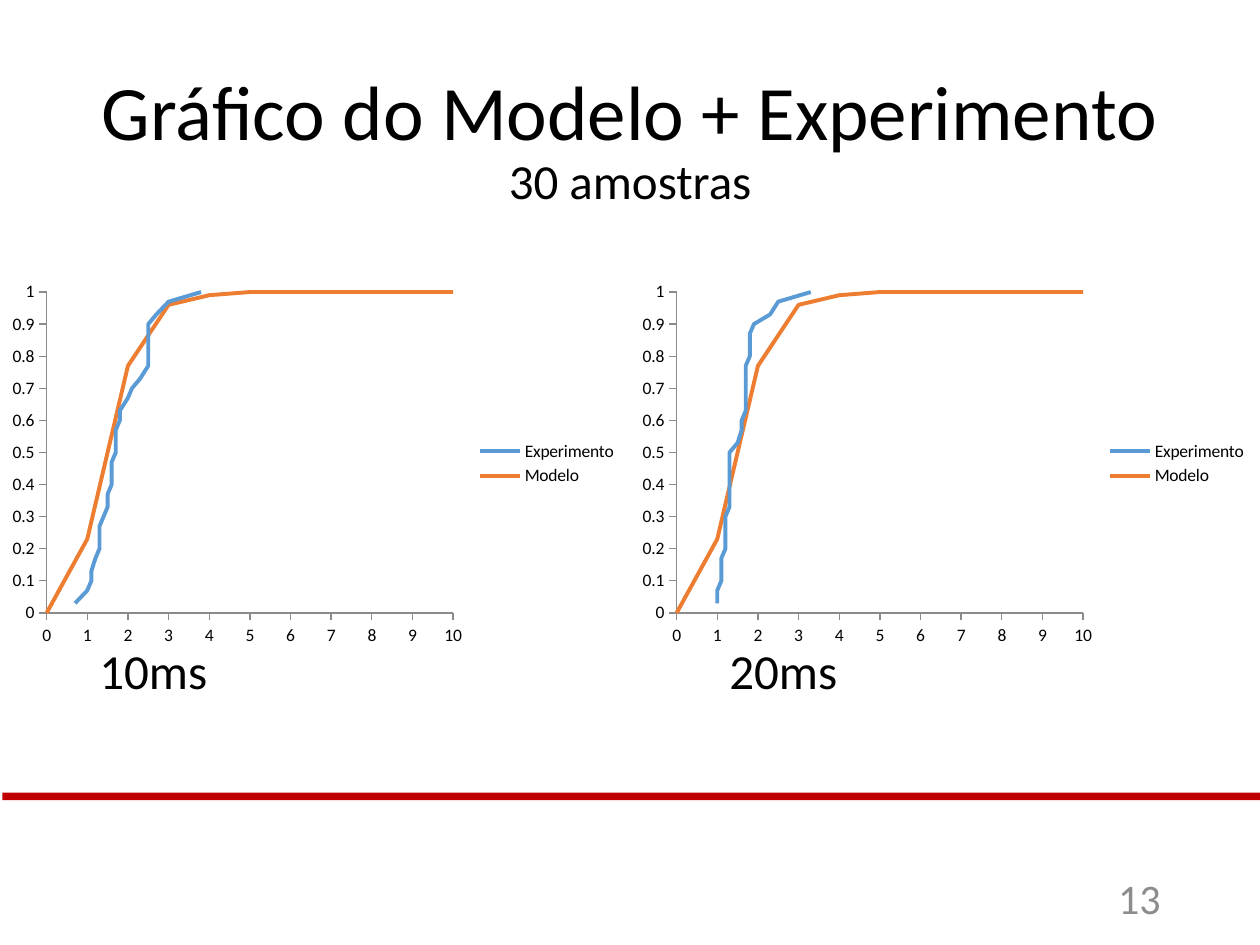
from lxml import etree
from pptx import Presentation, util as u
from pptx.chart.data import XyChartData
from pptx.dml.color import RGBColor
from pptx.enum import chart as charts, shapes, text
from pptx.oxml.ns import qn

FONT = "Calibri"
BLACK, GREY, RED = "000000", "8C8C8C", "C00000"
AXIS_GREY = "8B8B8B"
SERIES_COLORS = {"Experimento": "5B9BD5", "Modelo": "ED7D31"}
SAMPLES = 30
MODEL = [0, 0.23, 0.77, 0.96, 0.99, 1, 1, 1, 1, 1, 1]
EXPERIMENTS = {
    "10ms": [0.7, 1, 1.1, 1.1, 1.2, 1.3, 1.3, 1.3, 1.4, 1.5,
             1.5, 1.6, 1.6, 1.6, 1.7, 1.7, 1.7, 1.8, 1.8, 2,
             2.1, 2.3, 2.5, 2.5, 2.5, 2.5, 2.5, 2.7, 3, 3.8],
    "20ms": [1, 1, 1.1, 1.1, 1.1, 1.2, 1.2, 1.2, 1.2, 1.3,
             1.3, 1.3, 1.3, 1.3, 1.3, 1.5, 1.6, 1.6, 1.7, 1.7,
             1.7, 1.7, 1.7, 1.8, 1.8, 1.8, 1.9, 2.3, 2.5, 3.3],
}
CHART_WIDTH = 5


def rgb(value):
    return RGBColor.from_string(value)


def inches(*lengths):
    return [u.Inches(length) for length in lengths]


def style_font(font, size, color=BLACK):
    for name, value in {"name": FONT, "size": u.Pt(size)}.items():
        setattr(font, name, value)
    font.color.rgb = rgb(color)


def add_text(slide, box, lines, align, anchor, color=BLACK):
    """Add one paragraph of (text, size) lines and return it."""
    frame = slide.shapes.add_textbox(*inches(*box)).text_frame
    frame.word_wrap = True
    frame.vertical_anchor = anchor
    paragraph = frame.paragraphs[0]
    paragraph.alignment = align
    paragraph.line_spacing = 0.9
    for index, (words, size) in enumerate(lines):
        if index:
            paragraph.add_line_break()
        run = paragraph.add_run()
        run.text = words
        style_font(run.font, size, color)
    return paragraph


def add_tab_stop(paragraph, position):
    properties = paragraph._p.get_or_add_pPr()
    stops = etree.SubElement(properties, qn("a:tabLst"))
    etree.SubElement(stops, qn("a:tab"), pos=str(u.Inches(position)), algn="l")


def add_distribution_chart(slide, left, times):
    data = XyChartData()
    points = {
        "Experimento": [(x, round(rank / SAMPLES, 2)) for rank, x in enumerate(times, 1)],
        "Modelo": list(enumerate(MODEL)),
    }
    for name, pairs in points.items():
        series = data.add_series(name)
        for x, y in pairs:
            series.add_data_point(x, y)
    chart = slide.shapes.add_chart(
        charts.XL_CHART_TYPE.XY_SCATTER_LINES_NO_MARKERS,
        *inches(left, 2.18, CHART_WIDTH, 3), data).chart
    style_font(chart.font, 10)
    chart.has_title = False
    chart.has_legend = True
    chart.legend.position = charts.XL_LEGEND_POSITION.RIGHT
    chart.legend.include_in_layout = False
    chart.plots[0].vary_by_categories = False

    for axis, maximum, unit in ((chart.category_axis, 10, 1), (chart.value_axis, 1, 0.1)):
        settings = {
            "minimum_scale": 0, "maximum_scale": maximum, "major_unit": unit,
            "major_tick_mark": charts.XL_TICK_MARK.OUTSIDE,
            "minor_tick_mark": charts.XL_TICK_MARK.NONE,
            "has_major_gridlines": axis is chart.value_axis,
        }
        for name, value in settings.items():
            setattr(axis, name, value)
        axis.tick_labels.number_format = "General"
        axis.tick_labels.number_format_is_linked = False
        lines = [axis.format.line]
        if axis.has_major_gridlines:
            lines.append(axis.major_gridlines.format.line)
        for line in lines:
            line.color.rgb = rgb(AXIS_GREY)
            line.width = u.Pt(0.75)

    for series in chart.plots[0].series:
        series.smooth = False
        series.marker.style = charts.XL_MARKER_STYLE.NONE
        series.format.line.color.rgb = rgb(SERIES_COLORS[series.name])
        series.format.line.width = u.Pt(2.25)


def main():
    presentation = Presentation()
    presentation.slide_width, presentation.slide_height = inches(10, 7.5)
    slide = presentation.slides.add_slide(presentation.slide_layouts[6])

    bar = slide.shapes.add_shape(shapes.MSO_SHAPE.RECTANGLE, *inches(0.02, 6.29, 10, 0.06))
    bar.shadow.inherit = False
    bar.fill.solid()
    bar.fill.fore_color.rgb = rgb(RED)
    bar.line.fill.background()

    align, anchor = text.PP_ALIGN, text.MSO_ANCHOR
    add_text(slide, (0.69, 0.4, 8.62, 1.45),
             [("Gráfico do Modelo + Experimento", 44), (f"{SAMPLES} amostras", 28)],
             align.CENTER, anchor.MIDDLE)
    add_text(slide, (7.06, 6.95, 2.25, 0.4), [("13", 24)],
             align.RIGHT, anchor.MIDDLE, GREY)
    captions = add_text(slide, (0.69, 5.09, 8.62, 1.1), [("\t".join(EXPERIMENTS), 28)],
                        align.LEFT, anchor.TOP)
    add_tab_stop(captions, CHART_WIDTH)

    for column, times in enumerate(EXPERIMENTS.values()):
        add_distribution_chart(slide, column * CHART_WIDTH, times)

    presentation.save("out.pptx")


if __name__ == "__main__":
    main()
